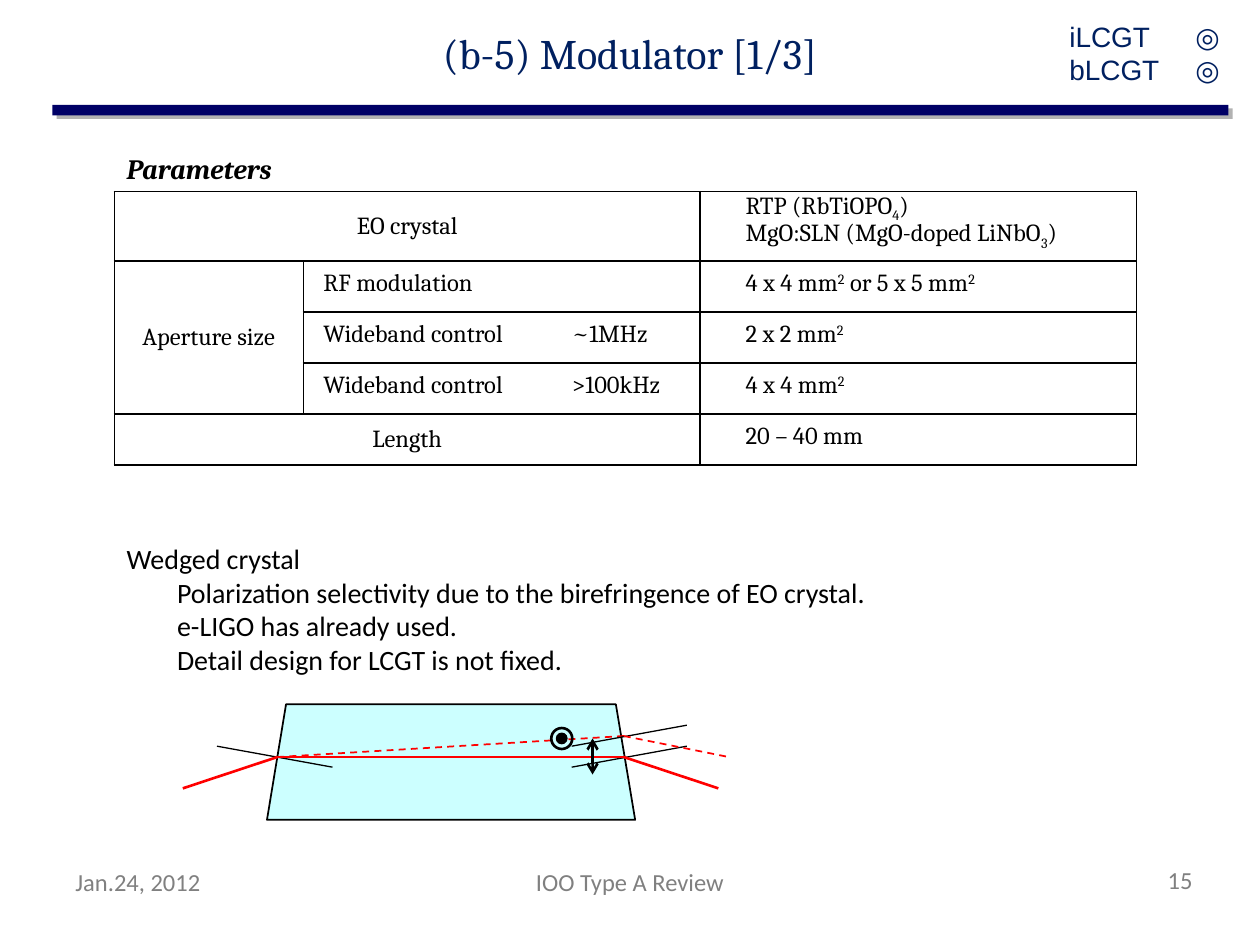
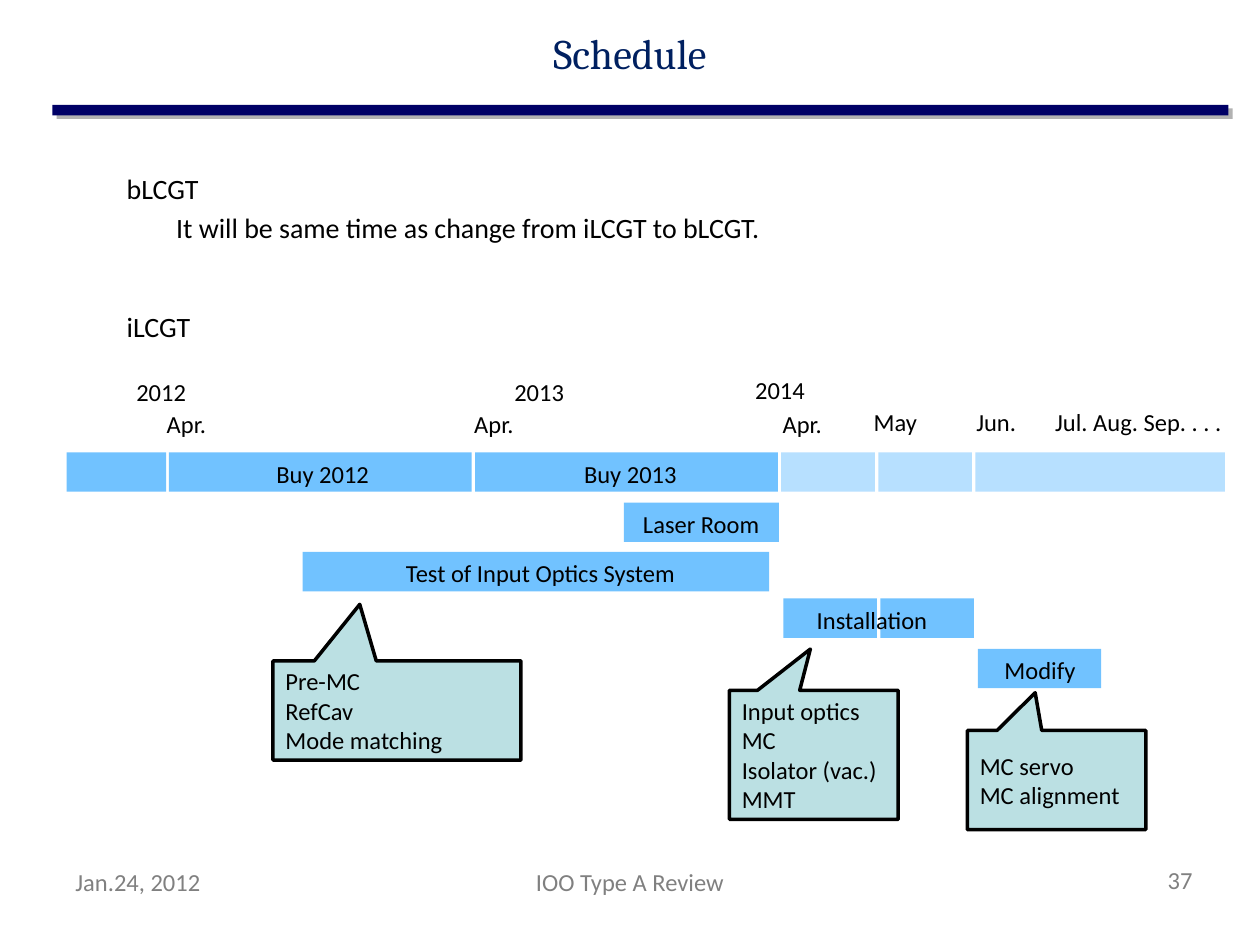
from dataclasses import dataclass
from typing import NamedTuple

from lxml import etree
from pptx import Presentation
from pptx.dml.color import RGBColor
from pptx.enum.dml import MSO_LINE
from pptx.enum.shapes import MSO_CONNECTOR, MSO_SHAPE
from pptx.enum.text import MSO_ANCHOR, MSO_AUTO_SIZE, PP_ALIGN
from pptx.oxml.ns import qn
from pptx.util import Pt

RECT, OVAL, CALL = MSO_SHAPE.RECTANGLE, MSO_SHAPE.OVAL, MSO_SHAPE.RECTANGULAR_CALLOUT
STRAIGHT, DASH = MSO_CONNECTOR.STRAIGHT, MSO_LINE.DASH
LEFT, MID, RIGHT = PP_ALIGN.LEFT, PP_ALIGN.CENTER, PP_ALIGN.RIGHT
TOP, CENTER = MSO_ANCHOR.TOP, MSO_ANCHOR.MIDDLE
GROW, FIXED = MSO_AUTO_SIZE.SHAPE_TO_FIT_TEXT, MSO_AUTO_SIZE.NONE


@dataclass(frozen=True)
class Theme:
    ink: str = "000000"
    title: str = "002060"
    foot: str = "808080"
    band: str = "000066"
    shade: str = "B2B2B2"
    beam: str = "FF0000"
    glass: str = "CCFFFF"
    plan: str = "71C2FF"
    pale: str = "B7E0FF"
    call: str = "BBE0E3"
    serif: str = "Cambria"
    sans: str = "Calibri"
    plain: str = "Arial"
    large: int = 24
    body: int = 16
    small: int = 14


T = Theme()


class Look(NamedTuple):
    size: int = T.small
    font: str = T.sans
    color: str = T.ink
    strong: bool = False


class Box(NamedTuple):
    x: float
    y: float
    w: float
    h: float


class Bit(NamedTuple):
    """A run of text, raised or lowered by a percentage."""
    text: str
    base: int = 0


@dataclass(frozen=True)
class Note:
    box: Box
    lines: tuple[str, ...]
    look: Look = Look()
    align: PP_ALIGN = LEFT
    anchor: MSO_ANCHOR = TOP
    grow: bool = False
    indent: float = 0  # for the lines after the first


@dataclass(frozen=True)
class Ray:
    start: tuple[float, float]
    end: tuple[float, float]
    color: str = T.ink
    width: float = 0.75
    dash: bool = False
    heads: bool = False


@dataclass(frozen=True)
class Bar:
    x: float
    y: float
    w: float
    color: str = T.plan


@dataclass(frozen=True)
class Callout:
    box: Box
    tip: tuple[float, float]
    lines: tuple[str, ...]


BODY = Look(T.body)
HEAD = Look(T.large, T.serif, T.title)
SIDE = Look(T.body, T.plain, T.title)
FOOT = Look(color=T.foot)
CELL = Look(font=T.serif)


def rgb(code: str) -> RGBColor:
    return RGBColor.from_string(code)


def write(par, bits, look: Look) -> None:
    for bit in bits:
        run = par.add_run()
        run.text = bit.text
        font = run.font
        font.size, font.name = Pt(look.size), look.font
        font.color.rgb = rgb(look.color)
        font.bold = font.italic = look.strong
        if bit.base:
            run._r.get_or_add_rPr().set("baseline", str(bit.base * 1000))


def indent(par, left: float) -> None:
    par._p.get_or_add_pPr().set("marL", str(Pt(left)))


def fill_text(frame, lines, look: Look, align=LEFT, left: float = 0) -> None:
    for i, line in enumerate(lines):
        par = frame.add_paragraph() if i else frame.paragraphs[0]
        par.alignment = align
        if i and left:
            indent(par, left)
        write(par, [Bit(line)], look)


def place(box: Box) -> list:
    return [Pt(v) for v in box]


def add_note(slide, note: Note) -> None:
    frame = slide.shapes.add_textbox(*place(note.box)).text_frame
    frame.word_wrap = not note.grow
    frame.auto_size = GROW if note.grow else FIXED
    frame.vertical_anchor = note.anchor
    fill_text(frame, note.lines, note.look, note.align, note.indent)


def paint(shape, fill: str | None, line: str | None = None, width: float = 1) -> None:
    shape.shadow.inherit = False
    if fill:
        shape.fill.solid()
        shape.fill.fore_color.rgb = rgb(fill)
    else:
        shape.fill.background()
    if line:
        shape.line.color.rgb = rgb(line)
        shape.line.width = Pt(width)
    else:
        shape.line.fill.background()


def add_shape(slide, kind, box: Box, fill, line=None, width: float = 1):
    shape = slide.shapes.add_shape(kind, *place(box))
    paint(shape, fill, line, width)
    return shape


def add_ray(slide, ray: Ray) -> None:
    ends = [Pt(v) for v in ray.start + ray.end]
    link = slide.shapes.add_connector(STRAIGHT, *ends)
    link.line.color.rgb = rgb(ray.color)
    link.line.width = Pt(ray.width)
    if ray.dash:
        link.line.dash_style = DASH
    if ray.heads:
        for tag in ("a:headEnd", "a:tailEnd"):
            etree.SubElement(link.line._get_or_add_ln(), qn(tag), type="arrow")
    etree.SubElement(link._element.spPr, qn("a:effectLst"))


def add_call(slide, call: Callout) -> None:
    shape = add_shape(slide, CALL, call.box, T.call, T.ink, 2)
    for i, value in enumerate(call.tip):
        shape.adjustments[i] = value
    frame = shape.text_frame
    frame.word_wrap = True
    frame.vertical_anchor = CENTER
    fill_text(frame, call.lines, Look())


def add_base(deck, title: str, page: int):
    """Add a slide with the shared title, double band and footer."""
    slide = deck.slides.add_slide(deck.slide_layouts[6])
    add_shape(slide, RECT, Box(32.4, 62, 672, 6), T.shade)
    add_shape(slide, RECT, Box(30, 60, 672, 6), T.band)
    for note in (
        Note(Box(0, 0, 720, 60.5), (title,), HEAD, MID, CENTER),
        Note(Box(36, 492, 168, 37.5), ("Jan.24, 2012",), FOOT),
        Note(Box(628.5, 491, 60, 37.5), (str(page),), FOOT, RIGHT),
        Note(Box(246, 492, 228, 37.5), ("IOO Type A Review",), FOOT, MID),
    ):
        add_note(slide, note)
    return slide


def frame_cell(cell) -> None:
    props = cell._tc.get_or_add_tcPr()
    for tag in ("a:lnL", "a:lnR", "a:lnT", "a:lnB"):
        edge = etree.SubElement(props, qn(tag), w=str(Pt(1)))
        ink = etree.SubElement(edge, qn("a:solidFill"))
        etree.SubElement(ink, qn("a:srgbClr"), val=T.ink)
    cell.fill.background()
    cell.vertical_anchor = CENTER


def fill_cell(cell, lines, left: float, tab: float = 0) -> None:
    cell.margin_left = cell.margin_right = Pt(5)
    cell.margin_top = cell.margin_bottom = 0
    for i, bits in enumerate(lines):
        par = cell.text_frame.add_paragraph() if i else cell.text_frame.paragraphs[0]
        indent(par, left)
        if tab:
            stops = etree.SubElement(par._p.get_or_add_pPr(), qn("a:tabLst"))
            etree.SubElement(stops, qn("a:tab"), pos=str(Pt(tab)), algn="l")
        par.line_spacing = Pt(13.2)
        if i:
            par.space_before = Pt(2.4)
        write(par, bits, CELL)


def add_specs(slide) -> None:
    square = Bit("2", 30)
    heads = {(0, 0, 0, 1): "EO crystal", (1, 0, 3, 0): "Aperture size",
             (4, 0, 4, 1): "Length"}
    uses = ("RF modulation", "Wideband control\t~1MHz", "Wideband control\t>100kHz")
    values = (
        ((Bit("RTP (RbTiOPO"), Bit("4", -25), Bit(")")),
         (Bit("MgO:SLN (MgO-doped LiNbO"), Bit("3", -25), Bit(")"))),
        ((Bit("4 x 4 mm"), square, Bit(" or 5 x 5 mm"), square),),
        ((Bit("2 x 2 mm"), square),),
        ((Bit("4 x 4 mm"), square),),
        ((Bit("20 – 40 mm"),),),
    )
    grid = slide.shapes.add_table(5, 3, *place(Box(65.3, 109.5, 584, 156.2))).table
    grid.first_row = grid.horz_banding = False
    for col, width in zip(grid.columns, (108, 226.8, 249.2)):
        col.width = Pt(width)
    for i, row in enumerate(grid.rows):
        row.height = Pt(29.15 if i else 39.6)
        for cell in row.cells:
            frame_cell(cell)
    for (top, left, low, right), text in heads.items():
        cell = grid.cell(top, left)
        cell.merge(grid.cell(low, right))
        fill_text(cell.text_frame, [text], CELL, MID)
    for i, use in enumerate(uses, 1):
        fill_cell(grid.cell(i, 1), [[Bit(use)]], 6.5, 142 if "\t" in use else 0)
    for i, lines in enumerate(values):
        fill_cell(grid.cell(i, 2), lines, 21)


def add_wedge(slide) -> None:
    """Draw the wedged crystal with its two beams."""
    edge = [(363, 468.5), (352, 402.5), (163.5, 402.5), (152.6, 468.5)]
    points = [(Pt(x), Pt(y)) for x, y in edge]
    pen = slide.shapes.build_freeform(*points[0])
    pen.add_line_segments(points[1:], close=True)
    paint(pen.convert_to_shape(), T.glass, T.ink)
    entry, low, high = (158.5, 432.6), (356.5, 432.6), (356.5, 420.6)
    for ray in (
        Ray((124, 426.4), (190, 438.4)),
        Ray((392.5, 426.4), (326.7, 438.4)),
        Ray(entry, (104.5, 450.5), T.beam, 1.5),
        Ray(entry, low, T.beam, 1.5),
        Ray(low, (410.5, 450.5), T.beam, 1.5),
        Ray(entry, high, T.beam, 1, dash=True),
        Ray((392.5, 414.4), (326.7, 426.4)),
        Ray(high, (416.5, 432.6), T.beam, 1, dash=True),
    ):
        add_ray(slide, ray)
    add_shape(slide, OVAL, Box(315, 416, 12, 12), None, T.ink, 1.5)
    add_shape(slide, OVAL, Box(318, 419, 6, 6), T.ink, T.ink, 0.75)
    add_ray(slide, Ray((338.6, 422), (338.6, 442.6), width=1.5, heads=True))


def add_plan(slide) -> None:
    """Draw the timeline bars, their words and the callouts."""
    rows = (258.5, 287.2, 315.4, 342, 370.8)
    high, month, step = 22.5, 53.5, 55.5
    bars = [Bar(38, rows[0], 57), Bar(96.5, rows[0], 173), Bar(271.5, rows[0], 173)]
    bars += [Bar(446.4 + i * step, rows[0], w, T.pale)
             for i, w in enumerate((month, month, 142.6))]
    bars += [Bar(356.5, rows[1], 88.6), Bar(173, rows[2], 266.5)]
    bars += [Bar(447.6 + i * step, rows[3], month) for i in range(2)]
    bars += [Bar(558.8, rows[4], 70.5)]
    for bar in bars:
        add_shape(slide, RECT, Box(bar.x, bar.y, bar.w, high), bar.color)
    words = [("2012", 70.6, 211.7, 43), ("2013", 286.6, 211.7, 43),
             ("2014", 424.2, 211, 43), ("May", 491.8, 229, 39.6),
             ("Jun.", 550.5, 229, 37.5), ("Jul. Aug. Sep. . . .", 595.5, 229, 110)]
    words += [("Apr.", x, 230.4, 37.5) for x in (87.8, 263.5, 439.7)]
    words += [("Buy 2012", 150.2, rows[0], 68.4), ("Buy 2013", 326, rows[0], 68.4),
              ("Laser Room", 360, rows[1], 81.4),
              ("Test of Input Optics System", 223.9, rows[2], 170),
              ("Installation", 459, rows[3], 78.5), ("Modify", 566.6, rows[4], 55.5)]
    for text, x, y, w in words:
        add_note(slide, Note(Box(x, y, w, 24.5), (text,), align=MID, grow=True))
    for call in (
        Callout(Box(416.8, 394.5, 96.5, 73.7), (-0.02, -0.82),
                ("Input optics", "MC", "Isolator (vac.)", "MMT")),
        Callout(Box(552.8, 417.4, 102, 56.7), (-0.12, -0.88),
                ("MC servo", "MC alignment")),
        Callout(Box(156, 377.7, 141.7, 56.7), (-0.15, -1.07),
                ("Pre-MC", "RefCav", "Mode matching")),
    ):
        add_call(slide, call)


def main() -> None:
    deck = Presentation()
    deck.slide_width, deck.slide_height = Pt(720), Pt(540)

    slide = add_base(deck, "(b-5) Modulator [1/3]", 15)
    add_note(slide, Note(Box(604, 0, 116, 60.5), ("iLCGT\t◎", "bLCGT\t◎"), SIDE,
                         anchor=CENTER))
    add_note(slide, Note(Box(65.3, 83, 102, 26.6), ("Parameters",),
                         Look(T.body, T.serif, strong=True), grow=True))
    add_specs(slide)
    add_note(slide, Note(Box(65.3, 306, 442, 85), (
        "Wedged crystal",
        "Polarization selectivity due to the birefringence of EO crystal.",
        "e-LIGO has already used.",
        "Detail design for LCGT is not fixed."), BODY, grow=True, indent=28.8))
    add_wedge(slide)

    slide = add_base(deck, "Schedule", 37)
    for text, x, y, w in (
        ("bLCGT", 65.3, 94.5, 56),
        ("It will be same time as change from iLCGT to bLCGT.", 93.6, 116.8, 352),
        ("iLCGT", 65.3, 173.6, 51),
    ):
        add_note(slide, Note(Box(x, y, w, 26.6), (text,), BODY, grow=True))
    add_plan(slide)
    deck.save("out.pptx")


if __name__ == "__main__":
    main()
